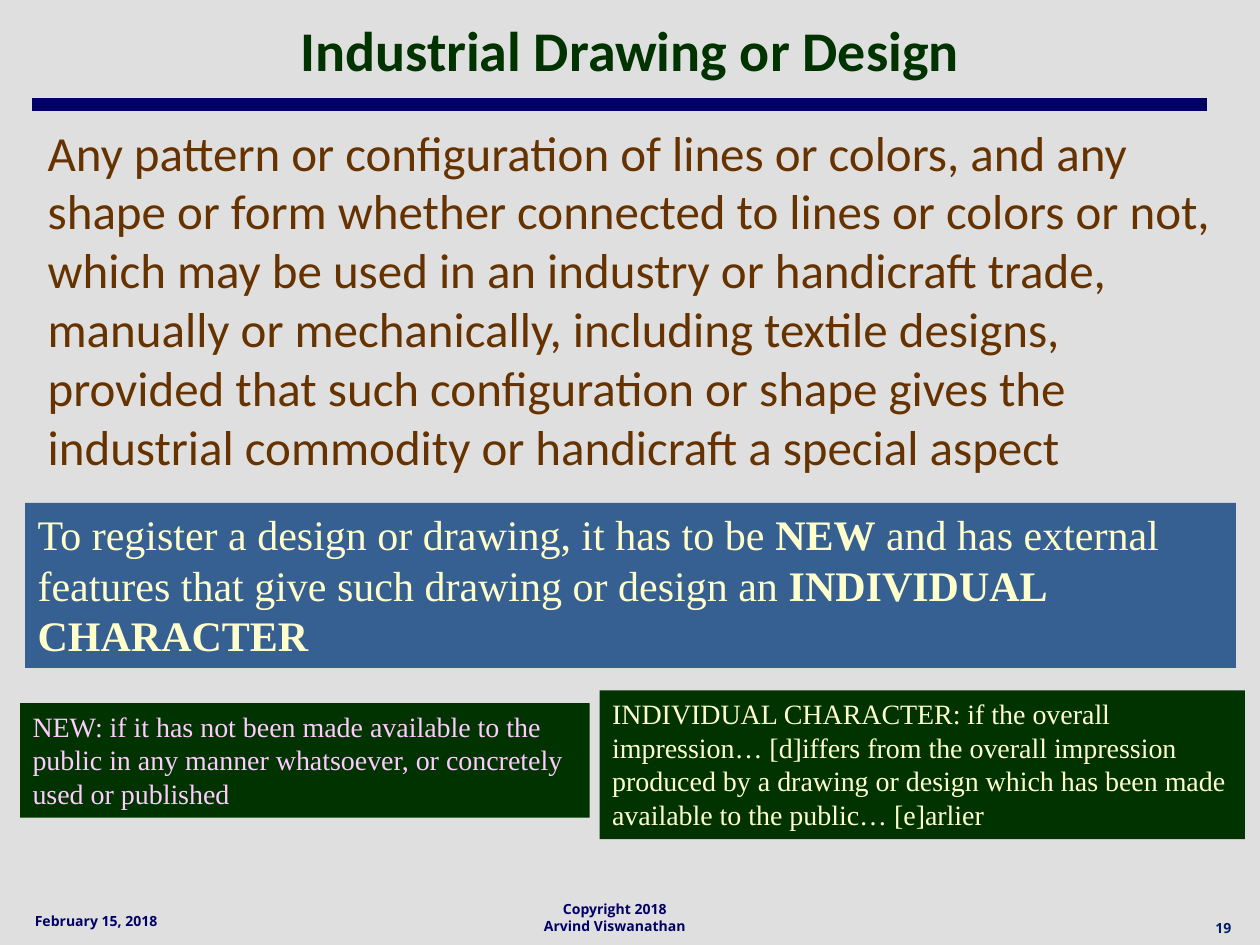
import pptx
import pptx.dml.color
import pptx.enum.shapes
import pptx.enum.text
import pptx.oxml
import pptx.oxml.ns
import pptx.util
import lxml.etree

RGBColor = pptx.dml.color.RGBColor
GREY = RGBColor(0xA6, 0xA6, 0xA6)
NAVY = RGBColor(0x00, 0x00, 0x66)
DARK_NAVY = RGBColor(0x00, 0x20, 0x60)
BROWN = RGBColor(0x66, 0x33, 0x00)
GREEN = RGBColor(0x00, 0x33, 0x00)
BLUE = RGBColor(0x37, 0x60, 0x92)
CREAM = RGBColor(0xFF, 0xFF, 0xCC)
PINK = RGBColor(0xFF, 0xCC, 0xFF)

LEFT = pptx.enum.text.PP_ALIGN.LEFT
CENTER = pptx.enum.text.PP_ALIGN.CENTER
TOP = pptx.enum.text.MSO_ANCHOR.TOP
MIDDLE = pptx.enum.text.MSO_ANCHOR.MIDDLE

deck = pptx.Presentation()
deck.slide_width = pptx.util.Inches(10)
deck.slide_height = pptx.util.Inches(7.5)
slide = deck.slides.add_slide(deck.slide_layouts[6])
COLUMN = deck.slide_width / 100
ROW = deck.slide_height / 75


def grid(left, top, width, height):
    """Turn columns and rows into lengths on the slide."""
    return [round(n * unit) for n, unit in
            ((left, COLUMN), (top, ROW), (width, COLUMN), (height, ROW))]


def add_text(area, text, size, color, font="Times New Roman", bold=False,
             align=LEFT, anchor=TOP, fill=None):
    """Write text, one paragraph a line; parts between * are bold."""
    if fill is None:
        box = slide.shapes.add_textbox(*grid(*area))
    else:
        box = slide.shapes.add_shape(
            pptx.enum.shapes.MSO_SHAPE.RECTANGLE, *grid(*area))
        box.shadow.inherit = False
        box.fill.solid()
        box.fill.fore_color.rgb = fill
        box.line.fill.background()
    frame = box.text_frame
    frame.word_wrap = True
    frame.vertical_anchor = anchor
    for number, line in enumerate(text.split("\n")):
        paragraph = frame.paragraphs[0] if number == 0 else frame.add_paragraph()
        paragraph.alignment = align
        for index, part in enumerate(line.split("*")):
            if part:
                run = paragraph.add_run()
                run.text = part
                run.font.name = font
                run.font.size = pptx.util.Pt(size)
                run.font.bold = bold or index % 2 == 1
                run.font.color.rgb = color


# Grey veil over the white background
veil = slide.shapes.add_shape(
    pptx.enum.shapes.MSO_SHAPE.RECTANGLE, *grid(0, 0, 100, 75))
veil.shadow.inherit = False
veil.fill.solid()
veil.fill.fore_color.rgb = GREY
veil.line.fill.background()
veil_color = veil.fill._xPr.find(".//" + pptx.oxml.ns.qn("a:srgbClr"))
lxml.etree.SubElement(veil_color, pptx.oxml.ns.qn("a:alpha"), val="35000")

# Title, rule and definition
add_text((5, 0.8, 90, 6.2), "Industrial Drawing or Design", 32, GREEN,
         font="Calibri", bold=True, align=CENTER, anchor=MIDDLE)

rule_left, rule_top, rule_width, _ = grid(2.5, 8.3, 93.3, 0)
title_rule = slide.shapes.add_connector(
    pptx.enum.shapes.MSO_CONNECTOR.STRAIGHT,
    rule_left, rule_top, rule_left + rule_width, rule_top)
title_rule.line.color.rgb = NAVY
title_rule.line.width = pptx.util.Pt(7)
lxml.etree.SubElement(title_rule._element.spPr, pptx.oxml.ns.qn("a:effectLst"))

add_text((2.8, 9.2, 96.1, 33.6),
         "Any pattern or configuration of lines or colors, and any shape or form "
         "whether connected to lines or colors or not, which may be used in an "
         "industry or handicraft trade, manually or mechanically, including "
         "textile designs, provided that such configuration or shape gives the "
         "industrial commodity or handicraft a special aspect",
         28, BROWN, font="Calibri")

# Condition for registering, and its two terms
add_text((2, 39.9, 96.1, 13.1),
         "To register a design or drawing, it has to be *NEW* and has external "
         "features that give such drawing or design an *INDIVIDUAL CHARACTER*",
         24, CREAM, fill=BLUE)
add_text((1.6, 55.8, 45.2, 9.1),
         "NEW: if it has not been made available to the public in any manner "
         "whatsoever, or concretely used or published",
         16, PINK, fill=GREEN)
add_text((47.6, 54.8, 51.2, 11.8),
         "INDIVIDUAL CHARACTER: if the overall\n"
         "impression… [d]iffers from the overall impression produced by a "
         "drawing or design which has been made available to the public… "
         "[e]arlier",
         16, CREAM, fill=GREEN)

# Footer
for area, note, color in (
        ((0.8, 71.9, 13.7, 2.5), "February 15, 2018", NAVY),
        ((41.7, 71, 14.2, 3.1), "Copyright 2018\nArvind Viswanathan", NAVY),
        ((95, 72.5, 4.2, 1.8), "19", DARK_NAVY)):
    add_text(area, note, 8, color, font="Open Sans", bold=True, align=CENTER)

deck.save("out.pptx")
